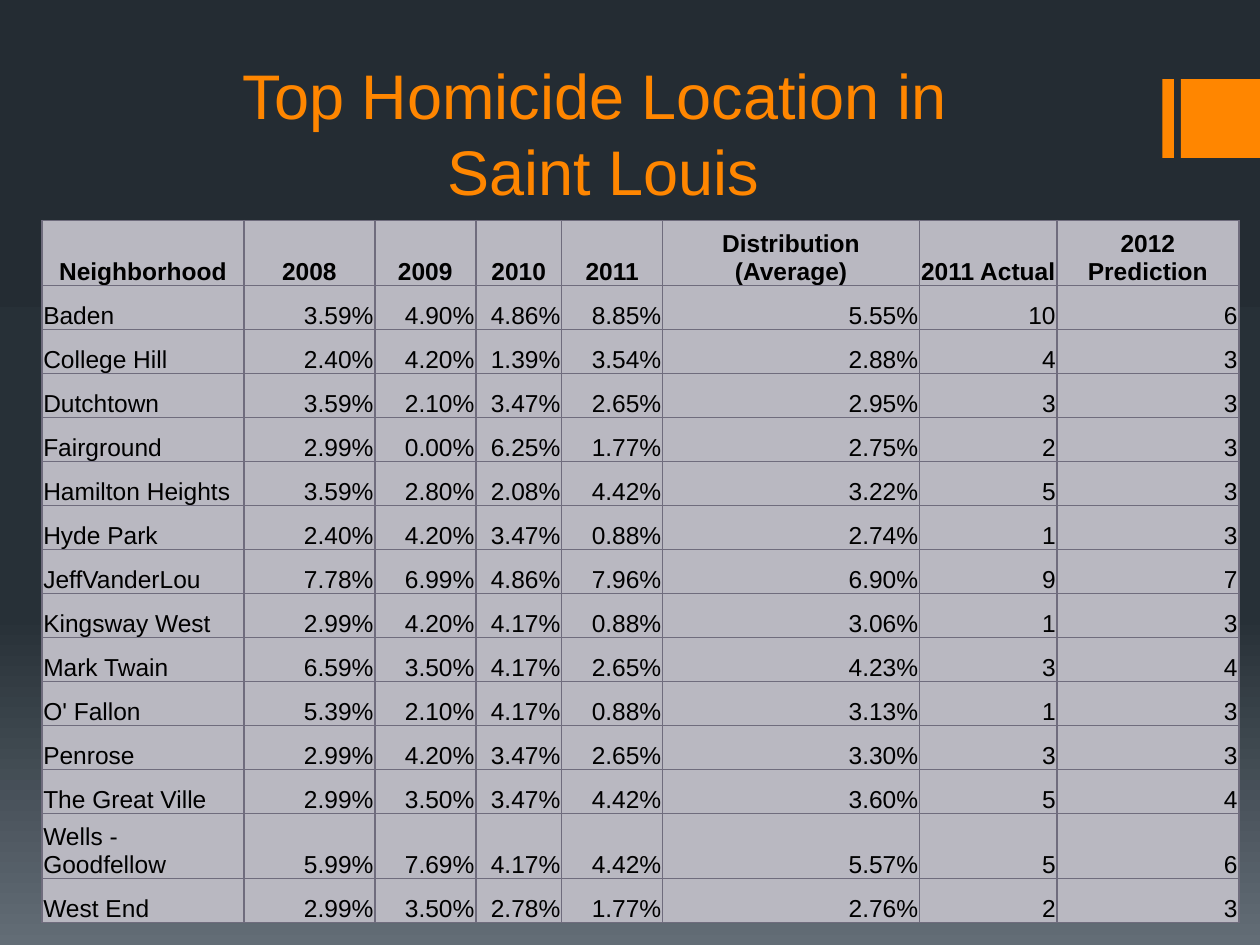
from copy import deepcopy
from dataclasses import dataclass

from lxml import etree
from pptx import Presentation
from pptx import util as u
from pptx.dml.color import RGBColor
from pptx.enum import shapes, text
from pptx.oxml.ns import qn
from pptx.slide import Slide
from pptx.table import _Cell


@dataclass(frozen=True)
class Theme:
    font: str = "Arial"
    accent: str = "FF8600"
    ink: str = "000000"
    cell: str = "B9B8C1"
    rule: str = "6F6C7D"
    backdrop: tuple = ((0, "242C33"), (0.65, "273037"), (1, "636D76"))
    title_size: float = 36
    table_size: float = 14
    rule_width: float = 1


@dataclass(frozen=True)
class Box:
    left: float
    top: float
    width: float
    height: float

    def lengths(self) -> tuple:
        return tuple(u.Pt(n) for n in (self.left, self.top, self.width, self.height))


@dataclass(frozen=True)
class Neighborhood:
    name: str
    shares: str
    actual: int
    prediction: int

    def values(self) -> list[str]:
        percents = [f"{share}%" for share in self.shares.split()]
        return [self.name, *percents, str(self.actual), str(self.prediction)]


THEME = Theme()
ACCENT_BARS = (Box(664.2, 45.2, 6.7, 45), Box(674.8, 45.2, 45.2, 45))
TITLE_BOX = Box(59.8, 48.2, 570.2, 74.2)
TABLE_BOX = Box(24, 126, 684, 401.2)
COLUMN_WIDTHS = (115.4, 74.8, 57.7, 49.1, 57.7, 146.8, 78.5, 104)
ROW_HEIGHT, TALL_ROW_HEIGHT = 25.15, 37.15
TALL_ROWS = ("Neighborhood", "Wells - Goodfellow")
HEADINGS = ["Neighborhood", "2008", "2009", "2010", "2011",
            "Distribution (Average)", "2011 Actual", "2012 Prediction"]
NEIGHBORHOODS = (
    Neighborhood("Baden", "3.59 4.90 4.86 8.85 5.55", 10, 6),
    Neighborhood("College Hill", "2.40 4.20 1.39 3.54 2.88", 4, 3),
    Neighborhood("Dutchtown", "3.59 2.10 3.47 2.65 2.95", 3, 3),
    Neighborhood("Fairground", "2.99 0.00 6.25 1.77 2.75", 2, 3),
    Neighborhood("Hamilton Heights", "3.59 2.80 2.08 4.42 3.22", 5, 3),
    Neighborhood("Hyde Park", "2.40 4.20 3.47 0.88 2.74", 1, 3),
    Neighborhood("JeffVanderLou", "7.78 6.99 4.86 7.96 6.90", 9, 7),
    Neighborhood("Kingsway West", "2.99 4.20 4.17 0.88 3.06", 1, 3),
    Neighborhood("Mark Twain", "6.59 3.50 4.17 2.65 4.23", 3, 4),
    Neighborhood("O' Fallon", "5.39 2.10 4.17 0.88 3.13", 1, 3),
    Neighborhood("Penrose", "2.99 4.20 3.47 2.65 3.30", 3, 3),
    Neighborhood("The Great Ville", "2.99 3.50 3.47 4.42 3.60", 5, 4),
    Neighborhood("Wells - Goodfellow", "5.99 7.69 4.17 4.42 5.57", 5, 6),
    Neighborhood("West End", "2.99 3.50 2.78 1.77 2.76", 2, 3),
)


def paint_backdrop(slide: Slide) -> None:
    fill = slide.background.fill
    fill.gradient()
    fill.gradient_angle = 270
    stops = slide.element.find(f".//{qn('a:gsLst')}")
    stops.append(deepcopy(stops[0]))
    for stop, (position, color) in zip(fill.gradient_stops, THEME.backdrop):
        stop.position = position
        stop.color.rgb = RGBColor.from_string(color)


def draw_bar(slide: Slide, box: Box) -> None:
    bar = slide.shapes.add_shape(shapes.MSO_SHAPE.RECTANGLE, *box.lengths())
    bar.shadow.inherit = False
    bar.fill.solid()
    bar.fill.fore_color.rgb = RGBColor.from_string(THEME.accent)
    bar.line.fill.background()


def format_runs(paragraph, size: float, color: str, bold: bool = False) -> None:
    for run in paragraph.runs:
        run.font.name = THEME.font
        run.font.size = u.Pt(size)
        run.font.bold = bold
        run.font.color.rgb = RGBColor.from_string(color)


def draw_title(slide: Slide, wording: str) -> None:
    frame = slide.shapes.add_textbox(*TITLE_BOX.lengths()).text_frame
    frame.word_wrap = True
    frame.vertical_anchor = text.MSO_ANCHOR.BOTTOM
    heading = frame.paragraphs[0]
    heading.text = wording
    heading.alignment = text.PP_ALIGN.CENTER
    format_runs(heading, THEME.title_size, THEME.accent)


def rule_cell(cell: _Cell) -> None:
    properties = cell._tc.get_or_add_tcPr()
    for order, side in enumerate(("a:lnL", "a:lnR", "a:lnT", "a:lnB")):
        edge = etree.Element(qn(side), w=str(u.Pt(THEME.rule_width)))
        paint = etree.SubElement(edge, qn("a:solidFill"))
        etree.SubElement(paint, qn("a:srgbClr"), val=THEME.rule)
        properties.insert(order, edge)


def fill_cell(cell: _Cell, wording: str, alignment, bold: bool) -> None:
    cell.fill.solid()
    cell.fill.fore_color.rgb = RGBColor.from_string(THEME.cell)
    cell.margin_left = cell.margin_right = cell.margin_top = u.Pt(0.72)
    cell.margin_bottom = u.Pt(0)
    cell.vertical_anchor = text.MSO_ANCHOR.BOTTOM
    cell.text_frame.text = wording
    entry = cell.text_frame.paragraphs[0]
    entry.alignment = alignment
    format_runs(entry, THEME.table_size, THEME.ink, bold)
    rule_cell(cell)


def draw_homicide_table(slide: Slide) -> None:
    records = [HEADINGS, *(place.values() for place in NEIGHBORHOODS)]
    table = slide.shapes.add_table(
        len(records), len(HEADINGS), *TABLE_BOX.lengths()).table
    table.horz_banding = False
    for column, width in zip(table.columns, COLUMN_WIDTHS):
        column.width = u.Pt(width)
    align = text.PP_ALIGN
    for row_number, (row, record) in enumerate(zip(table.rows, records)):
        row.height = u.Pt(TALL_ROW_HEIGHT if record[0] in TALL_ROWS else ROW_HEIGHT)
        is_header = row_number == 0
        for column_number, (cell, wording) in enumerate(zip(row.cells, record)):
            body_alignment = align.RIGHT if column_number else align.LEFT
            fill_cell(cell, wording, align.CENTER if is_header else body_alignment, is_header)


def main() -> None:
    deck = Presentation()
    deck.slide_width, deck.slide_height = u.Pt(720), u.Pt(540)
    slide = deck.slides.add_slide(deck.slide_layouts[6])
    paint_backdrop(slide)
    for box in ACCENT_BARS:
        draw_bar(slide, box)
    draw_title(slide, "Top Homicide Location in \vSaint Louis")
    draw_homicide_table(slide)
    deck.save("out.pptx")


if __name__ == "__main__":
    main()
